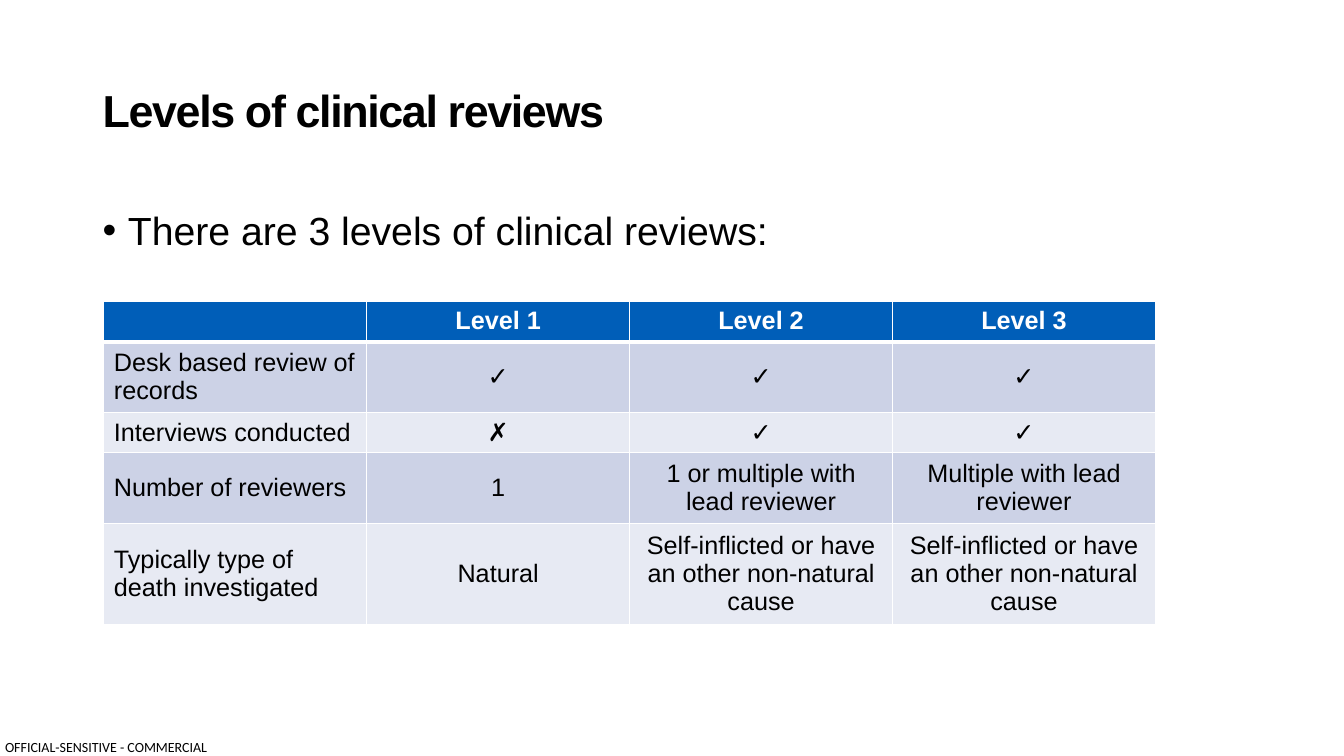
from lxml import etree
from pptx import Presentation
from pptx import util as u
from pptx.dml import color
from pptx.enum import text
from pptx.oxml import ns

COLORS = {
    "ink": "000000",
    "white": "FFFFFF",
    "header": "005EB8",
    "odd": "CCD2E6",
    "even": "E7EAF3",
}
LEVELS = [
    ["", "Level 1", "Level 2", "Level 3"],
    ["Desk based review of records", "✓", "✓", "✓"],
    ["Interviews conducted", "✗", "✓", "✓"],
    ["Number of reviewers", "1", "1 or multiple with lead reviewer", "Multiple with lead reviewer"],
    ["Typically type of death investigated", "Natural"]
    + ["Self-inflicted or have an other non-natural cause"] * 2,
]
ROW_HEIGHTS = [0.38, 0.66, 0.38, 0.66, 0.96]


class SlideBuilder:
    """Hold the slide and its style, and add text, bullets and tables."""

    def __init__(self, page):
        self.page = page

    def color(self, name):
        return color.RGBColor.from_string(COLORS[name])

    def style(self, para, size, name="ink", bold=False, face="Arial"):
        font = para.font
        font.name, font.size, font.bold = face, u.Pt(size), bold
        font.color.rgb = self.color(name)

    def text(self, words, place, size, margins=(0.1, 0.05), **look):
        box = self.page.shapes.add_textbox(*map(u.Inches, place))
        frame = box.text_frame
        frame.word_wrap = True
        frame.margin_left = frame.margin_right = u.Inches(margins[0])
        frame.margin_top = frame.margin_bottom = u.Inches(margins[1])
        para = frame.paragraphs[0]
        para.text = words
        self.style(para, size, **look)
        return para

    def title(self, words, place):
        para = self.text(words, place, 32, bold=True)
        para.line_spacing = 0.9
        self.page.shapes[-1].text_frame.vertical_anchor = text.MSO_ANCHOR.MIDDLE
        para.runs[0].font._element.set("spc", "-100")

    def bullet(self, words, place):
        para = self.text(words, place, 28)
        props = para._p.get_or_add_pPr()
        props.set("marL", str(u.Inches(0.25)))
        props.set("indent", str(u.Inches(-0.25)))
        mark = etree.Element(ns.qn("a:buChar"), char="•")
        props.insert(0, mark)
        mark.addprevious(etree.Element(ns.qn("a:buFont"), typeface="Arial"))

    def borders(self, cell, widths):
        props = cell._tc.get_or_add_tcPr()
        for side, width in widths.items():
            line = etree.SubElement(props, ns.qn(f"a:ln{side}"), w=str(u.Pt(width)))
            fill = etree.SubElement(line, ns.qn("a:solidFill"))
            etree.SubElement(fill, ns.qn("a:srgbClr"), val=COLORS["white"])

    def cell(self, cell, words, row, column):
        header = row == 0
        self.borders(cell, {"L": 1, "R": 1, "T": 3 if row == 1 else 1, "B": 3 if header else 1})
        cell.fill.solid()
        cell.fill.fore_color.rgb = self.color("header" if header else "odd" if row % 2 else "even")
        cell.vertical_anchor = text.MSO_ANCHOR.TOP if header else text.MSO_ANCHOR.MIDDLE
        para = cell.text_frame.paragraphs[0]
        para.text = words
        para.alignment = text.PP_ALIGN.CENTER if column else text.PP_ALIGN.LEFT
        self.style(para, 18, "white" if header else "ink", header)

    def table(self, rows, heights, left, top, width):
        place = map(u.Inches, (left, top, width, sum(heights)))
        table = self.page.shapes.add_table(len(rows), len(rows[0]), *place).table
        for row, (values, height) in enumerate(zip(rows, heights)):
            table.rows[row].height = u.Inches(height)
            for column, words in enumerate(values):
                self.cell(table.cell(row, column), words, row, column)


def main():
    deck = Presentation()
    deck.slide_width, deck.slide_height = u.Inches(13.33), u.Inches(7.5)
    builder = SlideBuilder(deck.slides.add_slide(deck.slide_layouts[6]))
    builder.text("OFFICIAL-SENSITIVE - COMMERCIAL", (0.05, 7.33, 2.2, 0.17), 10,
                 margins=(0, 0), face="Calibri")
    builder.title("Levels of clinical reviews", (0.92, 0.4, 11.5, 1.45))
    builder.bullet("There are 3 levels of clinical reviews:", (0.92, 2, 11.31, 0.68))
    builder.table(LEVELS, ROW_HEIGHTS, 1.03, 2.99, 10.43)
    deck.save("out.pptx")


if __name__ == "__main__":
    main()
